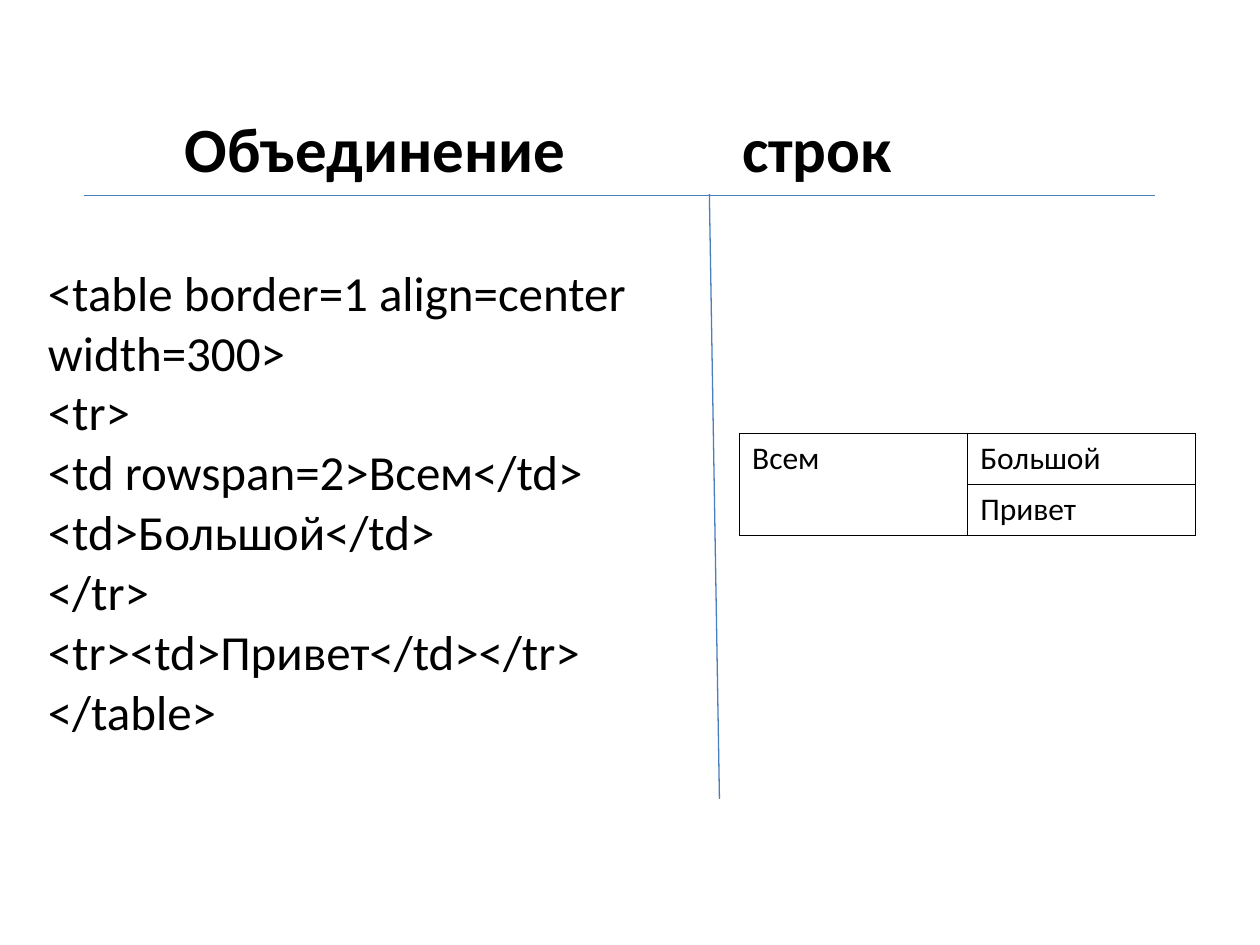
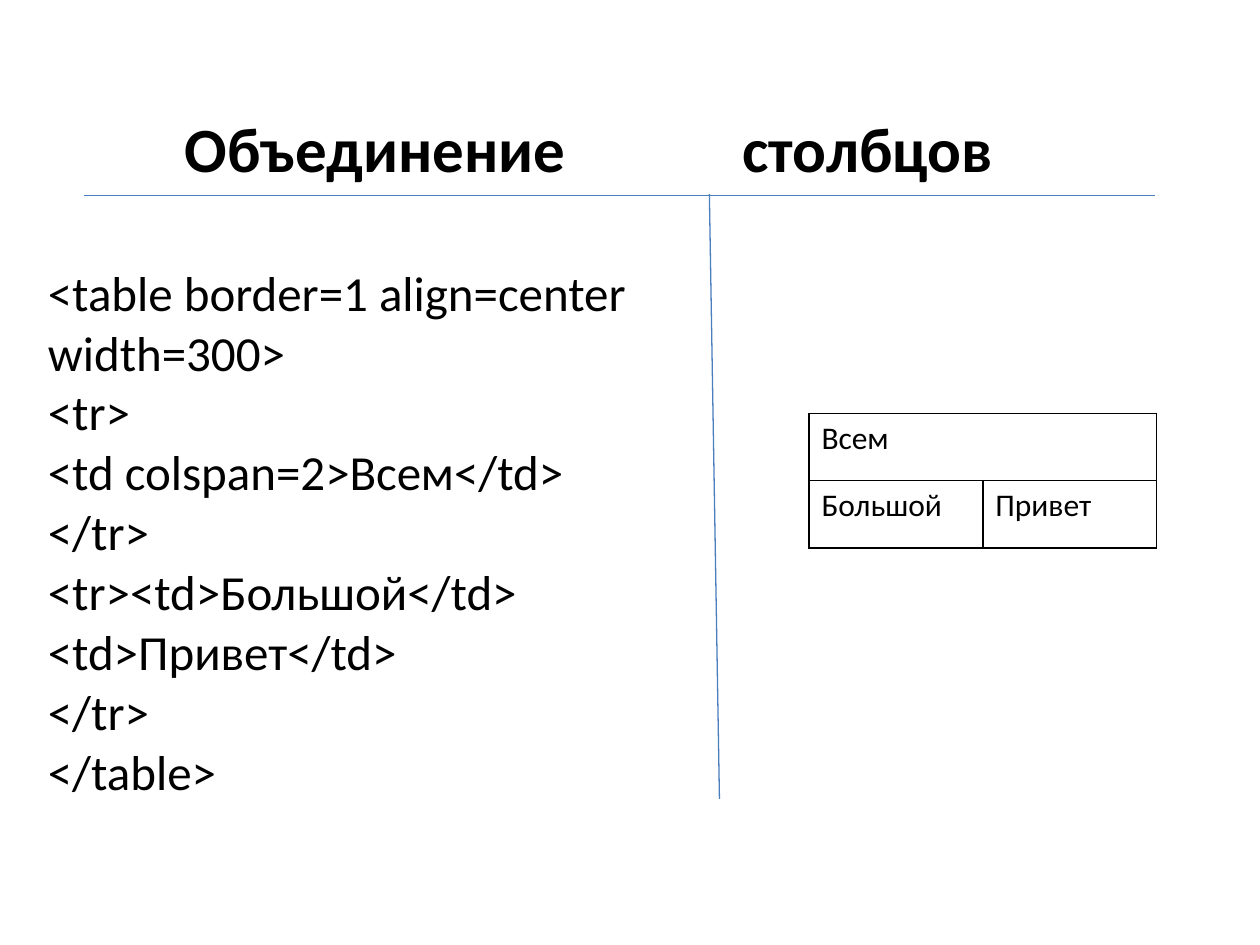
from lxml import etree
from pptx import Presentation, util as u
from pptx.dml.color import RGBColor
from pptx.enum import shapes, text
from pptx.oxml import ns

BLACK = RGBColor(0x00, 0x00, 0x00)
RULE_BLUE = RGBColor(0x4B, 0x7E, 0xBC)
FONT = "Calibri"
NO_STYLE = "{2D5ABB26-0587-4C30-8999-92F81FD0307C}"

# Shared layout, in inches
FRAME_LEFT, FRAME_TOP = 0.28, 0.84
FRAME_COLUMNS, FRAME_ROWS = (5.51, 3.94), (1.21, 4.31)
RULES = [(0.67, 1.55, 9.17, 1.55), (5.63, 1.54, 5.71, 6.34)]

# Each sample: title word, code lines, table place (left, top, column, row),
# merged cell that ends the span, and words by cell
samples = [
    {
        "title": "строк",
        "code": ["<table border=1 align=center width=300>", "<tr>",
                 "<td rowspan=2>Всем</td>", "<td>Большой</td>", "</tr>",
                 "<tr><td>Привет</td></tr>", "</table>"],
        "place": (5.87, 3.44, 1.81, 0.405),
        "span_end": (1, 0),
        "words": {(0, 0): "Всем", (0, 1): "Большой", (1, 1): "Привет"},
    },
    {
        "title": "столбцов",
        "code": ["<table border=1 align=center width=300>", "<tr>",
                 "<td colspan=2>Всем</td>", "</tr>", "<tr><td>Большой</td>",
                 "<td>Привет</td>", "</tr>", "</table>"],
        "place": (6.42, 3.28, 1.38, 0.535),
        "span_end": (0, 1),
        "words": {(0, 0): "Всем", (1, 0): "Большой", (1, 1): "Привет"},
    },
]


def add_plain_table(page, left, top, columns, rows, border=None):
    """Add an unfilled table, with black cell borders if a width is given."""
    frame = page.shapes.add_table(
        len(rows), len(columns), u.Inches(left), u.Inches(top),
        u.Inches(sum(columns)), u.Inches(sum(rows)))
    table = frame.table
    table.first_row = table.horz_banding = False
    next(frame.element.iter(ns.qn("a:tableStyleId"))).text = NO_STYLE
    for column, width in zip(table.columns, columns):
        column.width = u.Inches(width)
    for row, height in zip(table.rows, rows):
        row.height = u.Inches(height)
    for cell in table.iter_cells():
        cell.fill.background()
        if border:
            properties = cell.fill._xPr
            for index, side in enumerate(("lnL", "lnR", "lnT", "lnB")):
                line = etree.Element(ns.qn(f"a:{side}"), w=str(u.Pt(border)))
                fill = etree.SubElement(line, ns.qn("a:solidFill"))
                etree.SubElement(fill, ns.qn("a:srgbClr"), val=str(BLACK))
                properties.insert(index, line)
    return table


def write(cell, lines, size, bold=False, align=text.PP_ALIGN.LEFT):
    """Write one paragraph per line into a cell."""
    for index, line in enumerate(lines):
        box = cell.text_frame
        para = box.add_paragraph() if index else box.paragraphs[0]
        para.alignment = align
        span = para.add_run()
        span.text = line
        span.font.name, span.font.size = FONT, u.Pt(size)
        span.font.bold, span.font.color.rgb = bold, BLACK


deck = Presentation()
deck.slide_width, deck.slide_height = u.Inches(10), u.Inches(7.5)
blank = deck.slide_layouts.get_by_name("Blank")

for sample in samples:
    page = deck.slides.add_slide(blank)

    # Heading and code, laid out in a borderless table
    frame = add_plain_table(page, FRAME_LEFT, FRAME_TOP, FRAME_COLUMNS, FRAME_ROWS)
    write(frame.cell(0, 0), ["Объединение "], 36, True, text.PP_ALIGN.CENTER)
    write(frame.cell(0, 1), [sample["title"]], 36, True)
    write(frame.cell(1, 0), sample["code"], 28)

    # Rules under the heading and between the columns
    for ends in RULES:
        rule = page.shapes.add_connector(
            shapes.MSO_CONNECTOR.STRAIGHT, *[u.Inches(end) for end in ends])
        rule.line.color.rgb = RULE_BLUE
        rule.line.width = u.Pt(0.75)
        etree.SubElement(rule.element.spPr, ns.qn("a:effectLst"))

    # The table that the code produces
    left, top, width, height = sample["place"]
    result = add_plain_table(page, left, top, [width] * 2, [height] * 2, border=1)
    result.cell(0, 0).merge(result.cell(*sample["span_end"]))
    for place, word in sample["words"].items():
        write(result.cell(*place), [word], 18)

deck.save("out.pptx")
